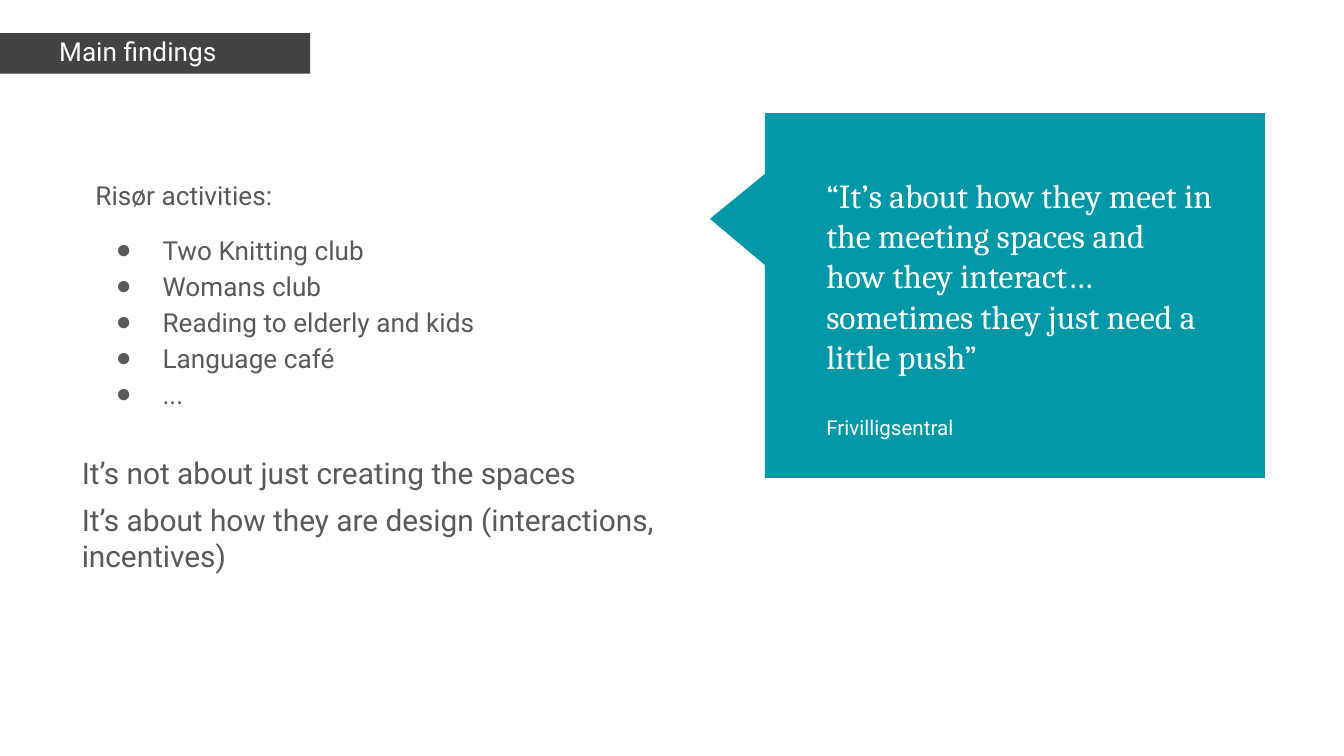
import pptx
import pptx.util
import pptx.dml.color
import pptx.enum.shapes
import pptx.enum.text
import pptx.oxml
import pptx.oxml.ns

Pt = pptx.util.Pt
GREY, WHITE = "595959", "FFFFFF"


def color(hex_string):
    return pptx.dml.color.RGBColor.from_string(hex_string)


def write(box, text, size=14, font="Roboto", ink=GREY, before=0, after=0,
          spacing=1.0, bullet=None):
    """Fill the first paragraph of the box, or add one if it has text."""
    frame = box.text_frame
    para = frame.add_paragraph() if frame.text else frame.paragraphs[0]
    para.text = text
    para.alignment = pptx.enum.text.PP_ALIGN.LEFT
    para.space_before, para.space_after = Pt(before), Pt(after)
    para.line_spacing = spacing
    for span in para.runs:
        span.font.name, span.font.size = font, Pt(size)
        span.font.color.rgb = color(ink)
    props = para._p.get_or_add_pPr()
    props.set("marL", str(Pt(36) if bullet else 0))
    props.set("indent", str(Pt(-25) if bullet else 0))
    namespace = pptx.oxml.ns.nsdecls("a")
    if bullet:
        props.append(pptx.oxml.parse_xml(
            f'<a:buClr {namespace}><a:srgbClr val="{ink}"/></a:buClr>'))
        props.append(pptx.oxml.parse_xml(
            f'<a:buChar {namespace} char="{bullet}"/>'))
    else:
        props.append(pptx.oxml.parse_xml(f"<a:buNone {namespace}/>"))


deck = pptx.Presentation()
deck.slide_width, deck.slide_height = Pt(720), Pt(405)
page = deck.slides.add_slide(deck.slide_layouts[1])
title, body = page.placeholders

# Speech bubble and title bar
shape_types = pptx.enum.shapes.MSO_SHAPE
callout = page.shapes.add_shape(
    shape_types.RECTANGULAR_CALLOUT, Pt(409.8), Pt(60.6), Pt(267.8), Pt(195.4))
callout.adjustments[0] = -0.61
callout.adjustments[1] = -0.21
bar = page.shapes.add_shape(
    shape_types.RECTANGLE, Pt(0), Pt(17.7), Pt(166.2), Pt(21.8))
for shape, fill in ((callout, "0097A7"), (bar, "434343")):
    shape.shadow.inherit = False
    shape.fill.solid()
    shape.fill.fore_color.rgb = color(fill)
    shape.line.fill.background()

# Text frames, with the placeholders brought in front of the bar
conclusion = page.shapes.add_textbox(0, 0, 0, 0)
quote = page.shapes.add_textbox(0, 0, 0, 0)
for box, left, top, width, height in (
    (conclusion, 36.7, 236.2, 329.8, 91.4),
    (quote, 435.6, 86.4, 223.9, 113),
    (title, 24.5, 11.5, 141.8, 21.6),
    (body, 43.9, 86.4, 233.3, 133.9),
):
    box.left, box.top = Pt(left), Pt(top)
    box.width, box.height = Pt(width), Pt(height)
    frame = box.text_frame
    frame.word_wrap = True
    frame.auto_size = pptx.enum.text.MSO_AUTO_SIZE.NONE
    frame.vertical_anchor = pptx.enum.text.MSO_ANCHOR.TOP
    frame.margin_left = frame.margin_right = Pt(7.2)
    frame.margin_top = frame.margin_bottom = Pt(7.2)
    box.element.getparent().append(box.element)

write(title, "Main findings", ink=WHITE)

write(body, "Risør activities:", spacing=1.15, after=10)
activities = ["Two Knitting club", "Womans club", "Reading to elderly and kids",
              "Language café", "..."]
for activity in activities:
    write(body, activity, spacing=1.15, bullet="●")

for statement in (
    "It’s not about just creating the spaces",
    "It’s about how they are design (interactions, incentives)",
):
    write(conclusion, statement, size=16, after=6)

write(quote, "“It’s about how they meet in the meeting spaces and\v"
      "how they interact… sometimes they just need a little push”",
      size=18, font="Cambria", ink=WHITE)
write(quote, "Frivilligsentral", size=11, ink=WHITE, before=21)

deck.save("out.pptx")
